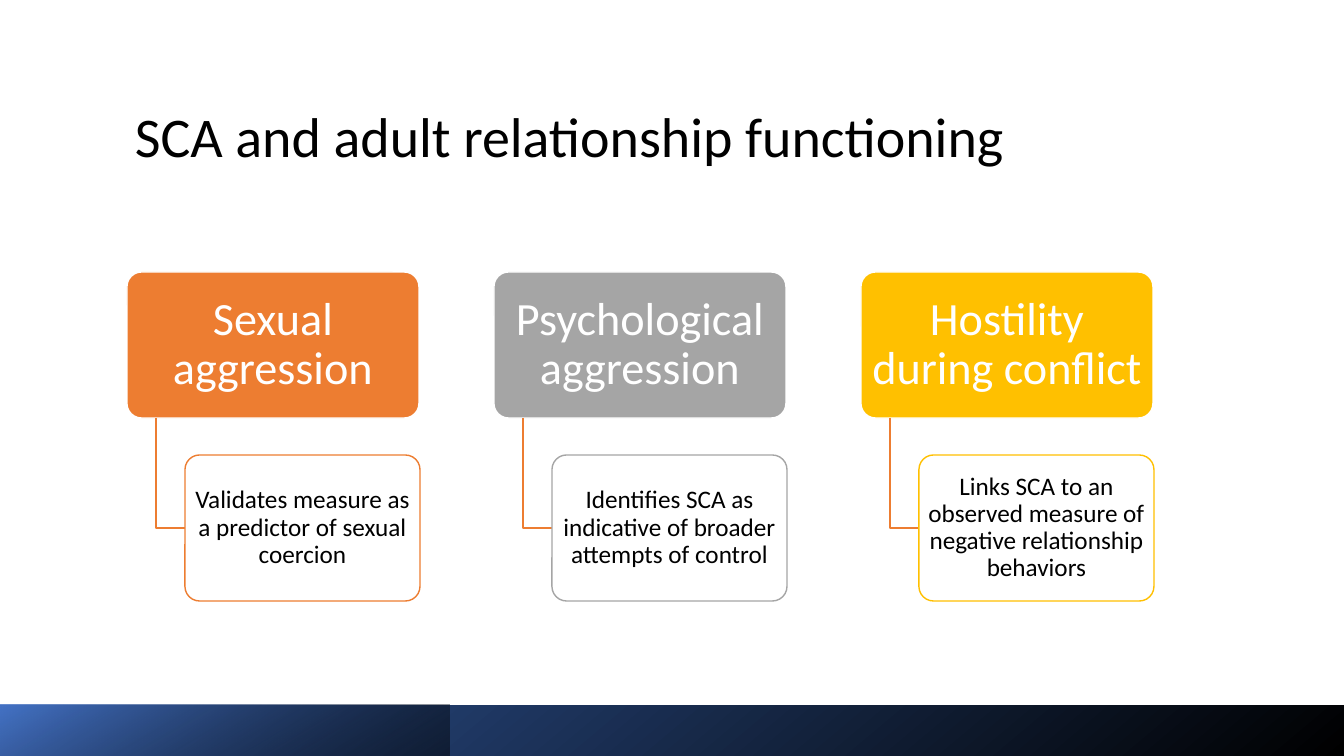
from pptx import Presentation
from pptx import util as u
from pptx.dml.color import RGBColor
from pptx.enum import shapes, text
from pptx.oxml.ns import qn
from lxml import etree

PX = 914400 / 100.8  # EMU per px

WHITE = RGBColor(0xFF, 0xFF, 0xFF)
BLACK = RGBColor(0x00, 0x00, 0x00)
ORANGE = RGBColor(0xED, 0x7D, 0x31)
GRAY = RGBColor(0xA5, 0xA5, 0xA5)
GOLD = RGBColor(0xFF, 0xC0, 0x00)
NAVY = RGBColor(0x2F, 0x55, 0x97)
BLUE = RGBColor(0x44, 0x72, 0xC4)

FONT = "Calibri"
LEFT, PITCH = 127, 367
COLUMNS = [
    (ORANGE, "Sexual aggression",
     "Validates measure as a predictor of sexual coercion"),
    (GRAY, "Psychological aggression",
     "Identifies SCA as indicative of broader attempts of control"),
    (GOLD, "Hostility during conflict",
     "Links SCA to an observed measure of negative relationship behaviors"),
]


def px(n):
    return u.Emu(round(n * PX))


def set_opacity(s, percent):
    """Make the first colour of the shape's fill partly transparent."""
    color = next(s._element.spPr.iter(qn("a:srgbClr")))
    etree.SubElement(color, qn("a:alpha")).set("val", str(percent * 1000))


def write(s, words, size, color, align):
    tf = s.text_frame
    tf.word_wrap = True
    tf.vertical_anchor = text.MSO_ANCHOR.MIDDLE
    tf.text = words
    p = tf.paragraphs[0]
    p.alignment = align
    p.line_spacing = 0.9
    font = p.runs[0].font
    font.name, font.size, font.color.rgb = FONT, u.Pt(size), color


def add_title(slide, words):
    s = slide.shapes.add_textbox(px(125), px(79), px(1122), px(121))
    write(s, words, 40, BLACK, text.PP_ALIGN.LEFT)


def add_bar(slide, width, end_color, end_stop, angle):
    s = slide.shapes.add_shape(shapes.MSO_SHAPE.RECTANGLE,
                               0, px(705), px(width), px(51))
    s.shadow.inherit = False
    s.line.fill.background()
    s.fill.gradient()
    s.fill.gradient_angle = angle
    start, end = s.fill.gradient_stops
    start.position, start.color.rgb = 0, BLACK
    end.position, end.color.rgb = end_stop, end_color
    return s


def add_box(slide, x, y, w, h, fill, line, words, size, color, inset_x, inset_y):
    s = slide.shapes.add_shape(shapes.MSO_SHAPE.ROUNDED_RECTANGLE,
                               px(x), px(y), px(w), px(h))
    s.adjustments[0] = 0.1
    s.shadow.inherit = False
    s.fill.solid()
    s.fill.fore_color.rgb = fill
    s.line.color.rgb = line
    s.line.width = u.Pt(1)
    tf = s.text_frame
    tf.margin_left = tf.margin_right = px(inset_x)
    tf.margin_top = tf.margin_bottom = px(inset_y)
    write(s, words, size, color, text.PP_ALIGN.CENTER)
    return s


def add_elbow(slide, x, y, w, h):
    builder = slide.shapes.build_freeform(x, y, scale=PX)
    builder.add_line_segments([(x, y + h), (x + w, y + h)], close=False)
    s = builder.convert_to_shape()
    s.shadow.inherit = False
    s.fill.background()
    s.line.color.rgb = ORANGE
    s.line.width = u.Pt(1)


def add_column(slide, x, color, heading, detail):
    add_box(slide, x, 272, 292, 146, color, WHITE, heading, 33, WHITE, 7, 5)
    add_elbow(slide, x + 29, 418, 29, 110)
    s = add_box(slide, x + 58, 455, 235, 146, WHITE, color, detail, 18, BLACK, 4, 3)
    set_opacity(s, 90)


def main():
    prs = Presentation()
    prs.slide_width, prs.slide_height = px(1344), px(756)
    slide = prs.slides.add_slide(prs.slide_layouts[6])

    add_title(slide, "SCA and adult relationship functioning")

    # Footer bars
    add_bar(slide, 1344, NAVY, 1, 130)
    accent = add_bar(slide, 450, BLUE, 0.99, 120)
    set_opacity(accent, 46)

    # Three findings, each a heading with its detail below
    for i, (color, heading, detail) in enumerate(COLUMNS):
        add_column(slide, LEFT + i * PITCH, color, heading, detail)

    prs.save("out.pptx")


if __name__ == "__main__":
    main()
